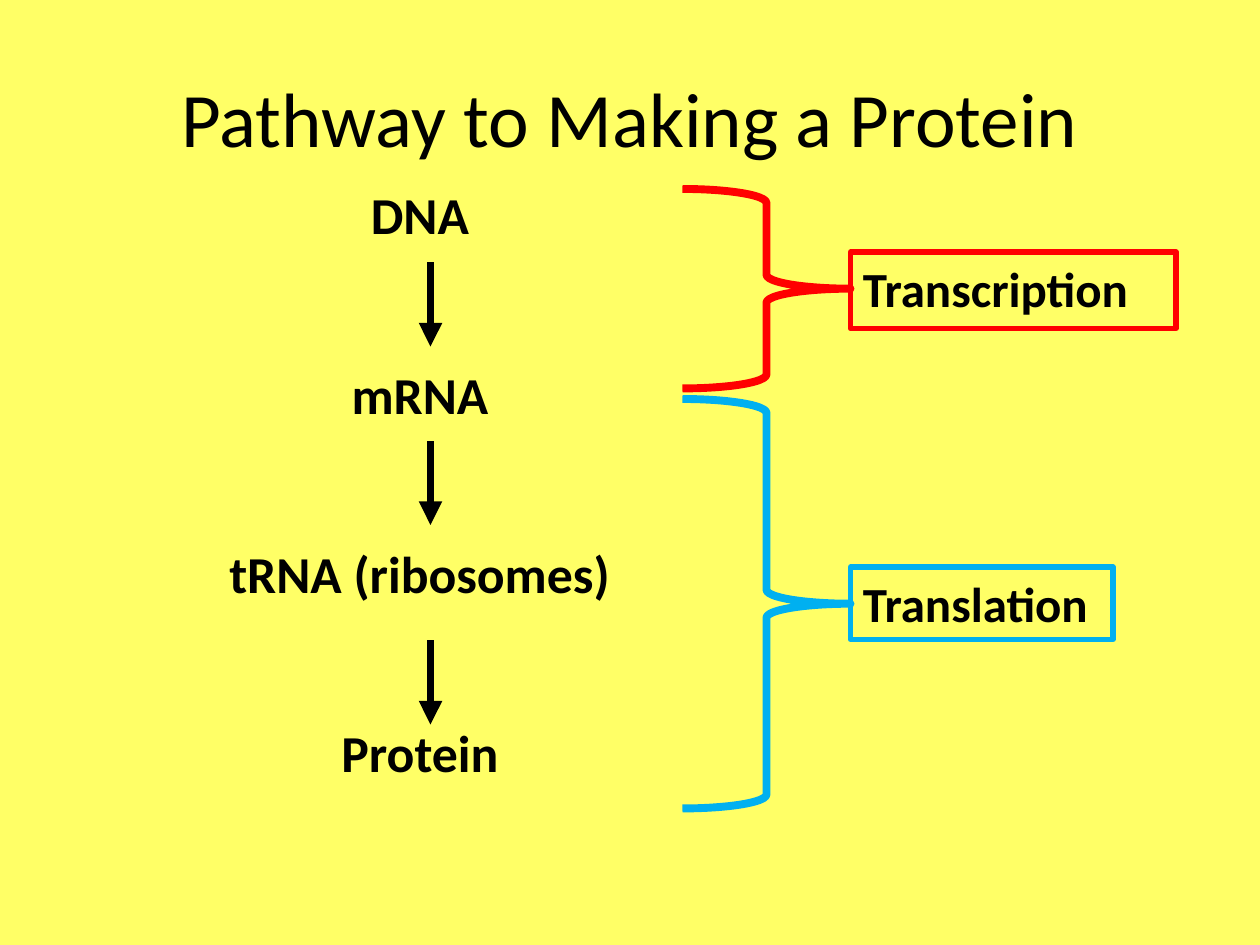
from lxml import etree
from pptx import Presentation
from pptx import util as u
from pptx.dml.color import RGBColor
from pptx.enum import shapes, text
from pptx.oxml.ns import qn

COLUMNS, ROWS = 120, 90
UNIT = u.Inches(10) // COLUMNS
BLACK, RED, BLUE, YELLOW = "000000", "FF0000", "00B0F0", "FFFF66"


def grid(*lengths):
    """Turn grid counts into slide lengths."""
    return [u.Emu(round(length * UNIT)) for length in lengths]


def paint(color_format, color):
    """Set a colour from a hex string."""
    color_format.rgb = RGBColor.from_string(color)


def outline(line, color, width):
    """Give a line its colour and width in points."""
    paint(line.color, color)
    line.width = u.Pt(width)


def write(shape, lines, size, bold=True, align=text.PP_ALIGN.CENTER,
          anchor=text.MSO_ANCHOR.TOP, spacing=1.0, after=0):
    """Write one paragraph per line into a shape."""
    frame = shape.text_frame
    frame.word_wrap = True
    frame.vertical_anchor = anchor
    frame.text = "\n".join(lines)
    for paragraph in frame.paragraphs:
        paragraph.alignment = align
        paragraph.line_spacing = spacing
        paragraph.space_after = u.Pt(after)
        font = paragraph.font
        font.name, font.size, font.bold = "Calibri", u.Pt(size), bold
        paint(font.color, BLACK)


def add_text(slide, box, lines, size, **style):
    """Add a text box with its lines."""
    write(slide.shapes.add_textbox(*grid(*box)), lines, size, **style)


def add_outlined(slide, kind, box, color, width):
    """Add an unfilled preset shape."""
    shape = slide.shapes.add_shape(kind, *grid(*box))
    shape.shadow.inherit = False
    shape.fill.background()
    outline(shape.line, color, width)
    return shape


def add_arrow(slide, column, row, length):
    """Add a downward arrow."""
    arrow = slide.shapes.add_connector(
        shapes.MSO_CONNECTOR.STRAIGHT, *grid(column, row, column, row + length))
    outline(arrow.line, BLACK, 4.5)
    etree.SubElement(arrow.line._get_or_add_ln(), qn("a:tailEnd"), type="triangle")
    etree.SubElement(arrow._element.spPr, qn("a:effectLst"))


def add_stage(slide, label, color, brace_rows, label_box):
    """Add a brace over some rows and the boxed name of its stage."""
    top, height = brace_rows
    add_outlined(slide, shapes.MSO_SHAPE.RIGHT_BRACE, (65, top, 16, height), color, 4.5)
    box = add_outlined(slide, shapes.MSO_SHAPE.RECTANGLE, label_box, color, 3)
    write(box, [label], 28, align=text.PP_ALIGN.LEFT)


def main():
    """Build the slide and save it."""
    presentation = Presentation()
    presentation.slide_width, presentation.slide_height = grid(COLUMNS, ROWS)
    slide = presentation.slides.add_slide(presentation.slide_layouts[6])
    slide.background.fill.solid()
    paint(slide.background.fill.fore_color, YELLOW)

    add_text(slide, (6, 3.6, 108, 15), ["Pathway to Making a Protein"], 44,
             bold=False, anchor=text.MSO_ANCHOR.MIDDLE)
    steps = ["DNA", "mRNA", "tRNA (ribosomes)", "Protein"]
    add_text(slide, (6, 18, 68, 62.4), steps, 29.6, spacing=0.8, after=74)
    for row in (25, 42, 61):
        add_arrow(slide, 41, row, 8)
    add_stage(slide, "Transcription", RED, (18, 19), (81, 24, 31, 7.3))
    add_stage(slide, "Translation", BLUE, (38, 39), (81, 54, 25, 6.9))

    presentation.save("out.pptx")


if __name__ == "__main__":
    main()
